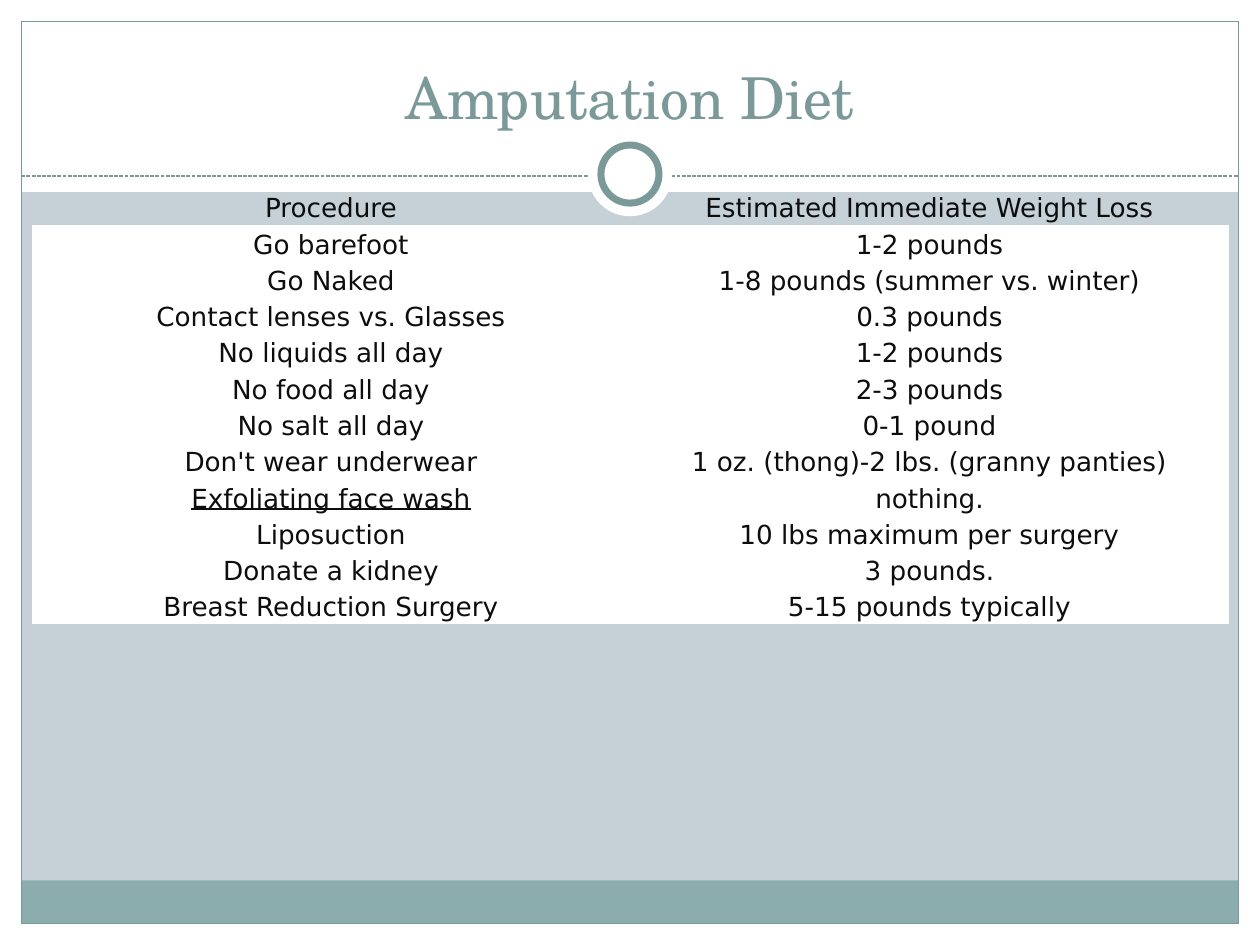
from lxml import etree
from pptx import Presentation
from pptx import util as u
from pptx.dml.color import RGBColor
from pptx.enum import dml, shapes, text
from pptx.oxml import ns

COLORS = {"backdrop": "C5D1D7", "paper": "FFFFFF", "band": "8CADAE",
          "accent": "7C999A", "ink": "0D0D0D"}
PLAIN_TABLE = "{2D5ABB26-0587-4C30-8999-92F81FD0307C}"
WIDTH, HEIGHT, MARGIN = 25.4, 19.05, 0.43
INNER_WIDTH = WIDTH - 2 * MARGIN
UNDERLINED = "Exfoliating face wash"
DIET = [
    ("Procedure", "Estimated Immediate Weight Loss"),
    ("Go barefoot", "1-2 pounds"),
    ("Go Naked", "1-8 pounds (summer vs. winter)"),
    ("Contact lenses vs. Glasses", "0.3 pounds"),
    ("No liquids all day", "1-2 pounds"),
    ("No food all day", "2-3 pounds"),
    ("No salt all day", "0-1 pound"),
    ("Don't wear underwear", "1 oz. (thong)-2 lbs. (granny panties)"),
    (UNDERLINED, "nothing."),
    ("Liposuction", "10 lbs maximum per surgery"),
    ("Donate a kidney", "3 pounds."),
    ("Breast Reduction Surgery", "5-15 pounds typically"),
]


def color(name):
    """Return the named colour."""
    return RGBColor.from_string(COLORS[name])


def add_block(slide, left, top, width, height, fill=None, outline=None,
              kind=shapes.MSO_SHAPE.RECTANGLE):
    """Add a flat shape; outline is a width in points."""
    block = slide.shapes.add_shape(kind, *map(u.Cm, (left, top, width, height)))
    block.shadow.inherit = False
    if fill:
        block.fill.solid()
        block.fill.fore_color.rgb = color(fill)
    else:
        block.fill.background()
    if outline:
        block.line.color.rgb = color("accent")
        block.line.width = u.Pt(outline)
    else:
        block.line.fill.background()


def add_divider(slide, y):
    """Add the dashed line under the title."""
    divider = slide.shapes.add_connector(
        shapes.MSO_CONNECTOR.STRAIGHT,
        *map(u.Cm, (MARGIN, y, WIDTH - MARGIN, y)))
    divider.line.color.rgb = color("accent")
    divider.line.width = u.Pt(0.75)
    divider.line.dash_style = dml.MSO_LINE.SQUARE_DOT
    etree.SubElement(divider._element.spPr, ns.qn("a:effectLst"))


def add_ring(slide, center_y):
    """Add the ring with its white halo, centred across the slide."""
    for size, outline in ((1.7, None), (1.17, 4)):
        add_block(slide, (WIDTH - size) / 2, center_y - size / 2, size, size,
                  "paper", outline, shapes.MSO_SHAPE.OVAL)


def style_line(frame, font, size, tint):
    """Centre the only paragraph of a frame and format its run."""
    line = frame.paragraphs[0]
    line.alignment = text.PP_ALIGN.CENTER
    run = line.runs[0]
    run.font.name = font
    run.font.size = u.Pt(size)
    run.font.color.rgb = color(tint)
    return line


def add_title(slide, wording):
    """Add the slide title."""
    title = slide.shapes.add_textbox(*map(u.Cm, (0.85, 0.64, 23.7, 2.12)))
    frame = title.text_frame
    frame.word_wrap = True
    frame.vertical_anchor = text.MSO_ANCHOR.BOTTOM
    frame.text = wording
    style_line(frame, "TeX Gyre Schola", 33, "accent")


def fill_cell(cell, wording, is_header):
    """Write and format one table cell."""
    cell.margin_left = cell.margin_right = cell.margin_top = cell.margin_bottom = 0
    if is_header:
        cell.fill.background()
    else:
        cell.fill.solid()
        cell.fill.fore_color.rgb = color("paper")
    cell.text_frame.text = wording
    line = style_line(cell.text_frame, "DejaVu Sans", 15, "ink")
    line.line_spacing = 1.15
    if wording == UNDERLINED:
        line.runs[0].font.underline = True


def add_diet_table(slide):
    """Add the table of procedures and weight losses."""
    header_height, row_height = 0.73, 0.7
    total = header_height + row_height * (len(DIET) - 1)
    table = slide.shapes.add_table(
        len(DIET), 2, *map(u.Cm, (0.64, 3.81, 24.13, total))).table
    table.first_row = table.horz_banding = False
    table._tbl.tblPr.find(ns.qn("a:tableStyleId")).text = PLAIN_TABLE
    for index, entry in enumerate(DIET):
        table.rows[index].height = u.Cm(row_height if index else header_height)
        for column, wording in enumerate(entry):
            fill_cell(table.cell(index, column), wording, index == 0)


def main():
    """Build and save the slide."""
    deck = Presentation()
    deck.slide_width, deck.slide_height = u.Cm(WIDTH), u.Cm(HEIGHT)
    slide = deck.slides.add_slide(deck.slide_layouts[6])
    slide.background.fill.solid()
    slide.background.fill.fore_color.rgb = color("backdrop")
    add_block(slide, 0, HEIGHT - MARGIN, WIDTH, MARGIN, "paper")
    add_block(slide, 0, 0, WIDTH, 3.87, "paper")
    for left in (0, WIDTH - MARGIN):
        add_block(slide, left, 0, MARGIN, HEIGHT, "paper")
    add_block(slide, MARGIN, 17.75, INNER_WIDTH, 0.87, "band")
    add_block(slide, MARGIN, MARGIN, INNER_WIDTH, HEIGHT - 2 * MARGIN, outline=0.75)
    add_divider(slide, 3.55)
    add_ring(slide, 3.51)
    add_title(slide, "Amputation Diet")
    add_diet_table(slide)
    deck.save("out.pptx")


if __name__ == "__main__":
    main()
